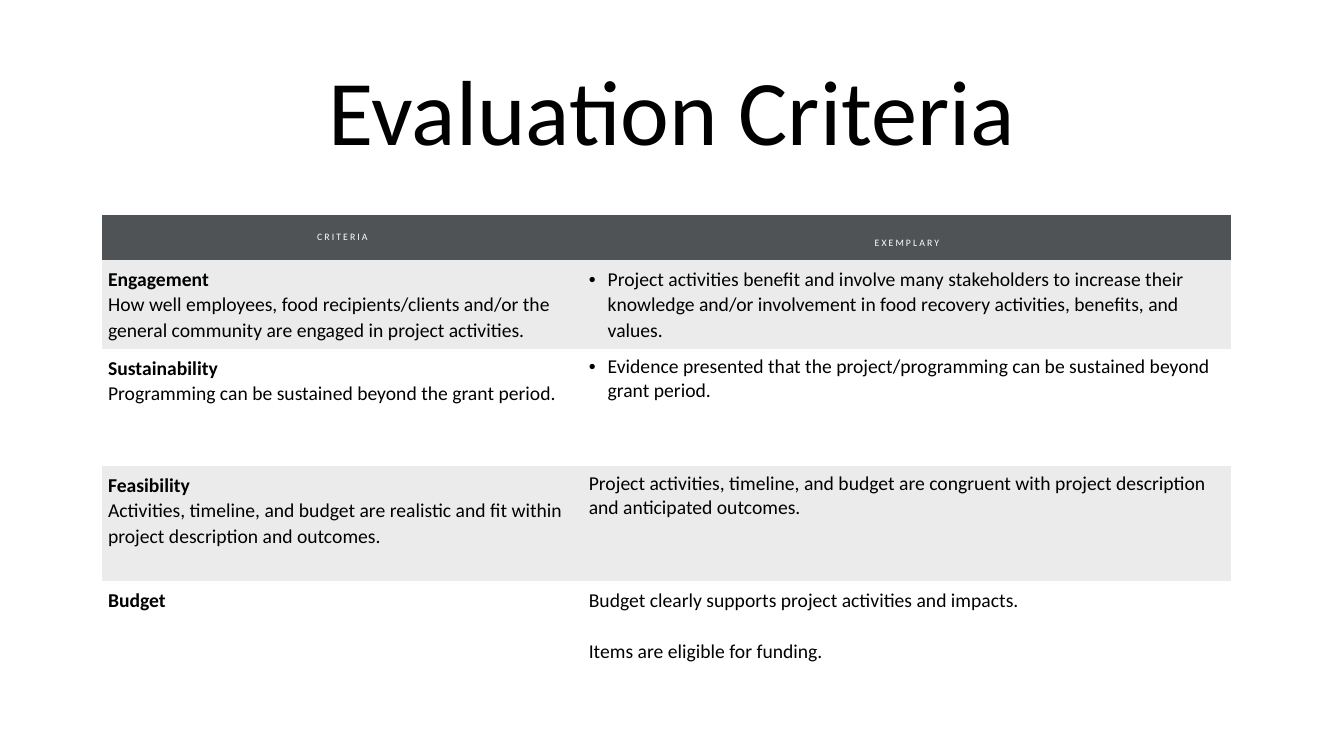
import lxml.etree
import pptx
import pptx.dml.color
import pptx.enum.text
import pptx.oxml.ns
import pptx.util

Pt = pptx.util.Pt
ALIGN = pptx.enum.text.PP_ALIGN
ANCHOR = pptx.enum.text.MSO_ANCHOR
NO_STYLE = "{2D5ABB26-0587-4C30-8999-92F81FD0307C}"


def color(code):
    return pptx.dml.color.RGBColor.from_string(code)


def write(paragraph, text, size, code, bold=False):
    """Add a formatted run to the paragraph and return the run."""
    run = paragraph.add_run()
    run.text = text
    font_format = {"name": "Calibri", "size": Pt(size), "bold": bold}
    for attribute, value in font_format.items():
        setattr(run.font, attribute, value)
    run.font.color.rgb = color(code)
    return run


deck = pptx.Presentation()
deck.slide_width, deck.slide_height = Pt(960), Pt(540)
slide = deck.slides.add_slide(deck.slide_layouts[6])

heading = slide.shapes.add_textbox(Pt(50.4), Pt(33.1), Pt(859), Pt(98.6)).text_frame
heading.word_wrap = True
heading.vertical_anchor = ANCHOR.MIDDLE
heading.paragraphs[0].alignment = ALIGN.CENTER
heading.paragraphs[0].line_spacing = 0.9
write(heading.paragraphs[0], "Evaluation Criteria", 66, "000000")

column_widths = [343.4, 463]
row_heights = [32.2, 63.5, 83.5, 82.2, 63.5]
criteria_table = slide.shapes.add_table(
    len(row_heights), len(column_widths),
    Pt(72.9), Pt(153.5), Pt(sum(column_widths)), Pt(sum(row_heights))).table
criteria_table.horz_banding = False
criteria_table._tbl.tblPr.find(pptx.oxml.ns.qn("a:tableStyleId")).text = NO_STYLE
for column, width in zip(criteria_table.columns, column_widths):
    column.width = Pt(width)
for row, height in zip(criteria_table.rows, row_heights):
    row.height = Pt(height)

# Space above each header label
for column, (label, top) in enumerate([("CRITERIA", 4.3), ("EXEMPLARY", 12.8)]):
    cell = criteria_table.cell(0, column)
    cell.fill.solid()
    cell.fill.fore_color.rgb = color("505356")
    cell.vertical_anchor = ANCHOR.MIDDLE
    cell.margin_left = cell.margin_right = cell.margin_bottom = Pt(4.3)
    cell.margin_top = Pt(top)
    paragraph = cell.text_frame.paragraphs[0]
    paragraph.alignment = ALIGN.CENTER
    run = write(paragraph, label, 7, "FFFFFF")
    run.font._element.set("spc", "150")

# Criterion, its description, exemplary statements, their line spacing, bulleted
criteria = [
    ("Engagement",
     "How well employees, food recipients/clients and/or the general community "
     "are engaged in project activities.",
     ["Project activities benefit and involve many stakeholders to increase their "
      "knowledge and/or involvement in food recovery activities, benefits, and values."],
     1.07, True),
    ("Sustainability",
     "Programming can be sustained beyond the grant period.",
     ["Evidence presented that the project/programming can be sustained beyond "
      "grant period."],
     1, True),
    ("Feasibility",
     "Activities, timeline, and budget are realistic and fit within project "
     "description and outcomes.",
     ["Project activities, timeline, and budget are congruent with project "
      "description and anticipated outcomes."],
     1, False),
    ("Budget", "",
     ["Budget clearly supports project activities and impacts.",
      "Items are eligible for funding."],
     1.07, False),
]
for row, (criterion, description, statements, spacing, bulleted) in enumerate(criteria, 1):
    name_cell, exemplary_cell = criteria_table.cell(row, 0), criteria_table.cell(row, 1)
    for cell in (name_cell, exemplary_cell):
        cell.margin_left = cell.margin_right = Pt(4.3)
        cell.margin_top = cell.margin_bottom = Pt(4.3)
        if row % 2:
            cell.fill.solid()
            cell.fill.fore_color.rgb = color("EBEBEB")
        else:
            cell.fill.background()

    paragraph = name_cell.text_frame.paragraphs[0]
    paragraph.line_spacing = 1.07
    write(paragraph, criterion, 14, "000000", bold=True)
    if description:
        paragraph = name_cell.text_frame.add_paragraph()
        paragraph.line_spacing = 1.07
        write(paragraph, description, 14, "000000")

    for index, statement in enumerate(statements):
        frame = exemplary_cell.text_frame
        paragraph = frame.add_paragraph() if index else frame.paragraphs[0]
        if bulleted:
            properties = paragraph._p.get_or_add_pPr()
            properties.set("marL", str(Pt(13.5)))
            properties.set("indent", str(-Pt(13.5)))
            for tag, key, value in [("a:buFont", "typeface", "Arial"),
                                    ("a:buChar", "char", "•")]:
                lxml.etree.SubElement(properties, pptx.oxml.ns.qn(tag)).set(key, value)
        paragraph.line_spacing = spacing
        if index:
            paragraph.space_before = Pt(18.3)
        write(paragraph, statement, 14, "000000")

deck.save("out.pptx")
